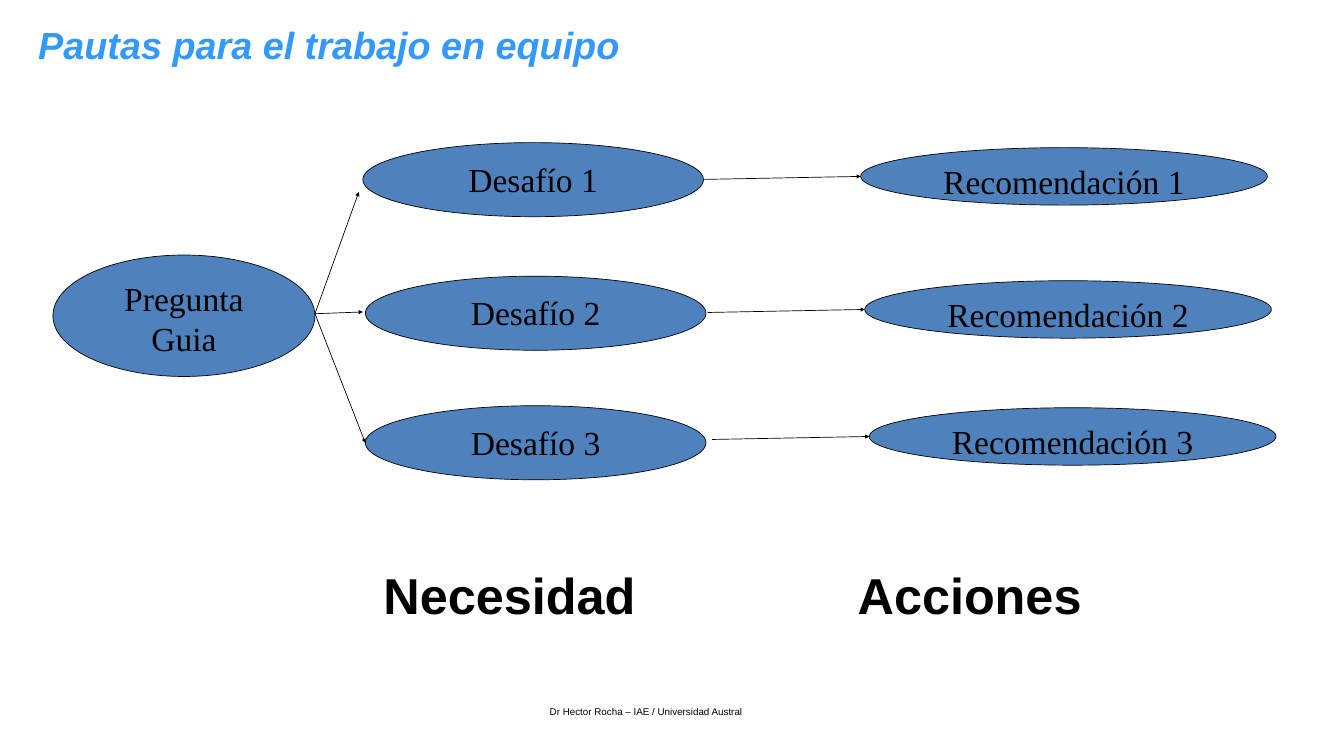
from lxml import etree
from pptx import Presentation
from pptx.dml.color import RGBColor
from pptx.enum.shapes import MSO_CONNECTOR, MSO_SHAPE
from pptx.enum.text import MSO_ANCHOR, PP_ALIGN
from pptx.oxml.ns import qn
from pptx.util import Inches, Pt

COLORS = {"title": "3399FF", "ellipse": "4F81BD", "ink": "000000"}


def rgb(name):
    return RGBColor.from_string(COLORS[name])


def style_text(frame, text, size, font_name, color="ink", bold=False, italic=False):
    frame.word_wrap = True
    frame.vertical_anchor = MSO_ANCHOR.TOP
    frame.text = text
    font = frame.paragraphs[0].runs[0].font
    font.size, font.name = Pt(size), font_name
    font.bold, font.italic = bold, italic
    font.color.rgb = rgb(color)


def add_label(slide, box, text, size, **look):
    label = slide.shapes.add_textbox(*map(Inches, box))
    style_text(label.text_frame, text, size, "Arial", **look)


def add_ellipse(slide, box, text):
    ellipse = slide.shapes.add_shape(MSO_SHAPE.OVAL, *map(Inches, box))
    ellipse.shadow.inherit = False
    ellipse.fill.solid()
    ellipse.fill.fore_color.rgb = rgb("ellipse")
    ellipse.line.color.rgb = rgb("ink")
    ellipse.line.width = Pt(1)
    frame = ellipse.text_frame
    frame.margin_left = frame.margin_right = Inches(0.2)
    frame.margin_top = frame.margin_bottom = Inches(0.1)
    style_text(frame, text, 48, "Times New Roman")
    frame.paragraphs[0].alignment = PP_ALIGN.CENTER


def add_arrow(slide, start, end):
    arrow = slide.shapes.add_connector(
        MSO_CONNECTOR.STRAIGHT, *map(Inches, (*start, *end)))
    arrow.line.color.rgb = rgb("ink")
    arrow.line.width = Pt(1)
    etree.SubElement(arrow.line._get_or_add_ln(), qn("a:tailEnd"), type="triangle")
    etree.SubElement(arrow._element.spPr, qn("a:effectLst"))


def add_question(slide, box, targets):
    left, top, width, height = box
    add_ellipse(slide, box, "Pregunta Guia")
    for target in targets:
        add_arrow(slide, (left + width, top + height / 2 - 0.04), target)


def add_challenge_row(slide, number, box, action_left, action_top):
    left, top, width, height = box
    action_width, action_height = 8.07, 1.14
    action_middle = action_top + action_height / 2
    add_ellipse(slide, box, f"Desafío {number}")
    add_ellipse(slide, (action_left, action_top, action_width, action_height),
                f"Recomendación {number}")
    add_arrow(slide, (action_left - 3.12, action_middle + 0.06),
              (action_left, action_middle))


def add_column_headings(slide, top):
    add_label(slide, (7.51, top, 8, 1.31), "Necesidad", 72, bold=True)
    add_label(slide, (16.92, top, 7.65, 1.31), "Acciones", 72, bold=True)


def main():
    deck = Presentation()
    deck.slide_width, deck.slide_height = Inches(26.67), Inches(15)
    slide = deck.slides.add_slide(deck.slide_layouts[6])

    add_label(slide, (10.81, 13.96, 5.67, 0.34),
              "Dr Hector Rocha – IAE / Universidad Austral", 14)
    add_label(slide, (0.66, 0.39, 16.43, 1.01), "Pautas para el trabajo en equipo",
              54, color="title", bold=True, italic=True)
    add_question(slide, (1.05, 5.06, 5.2, 2.41),
                 [(7.12, 3.81), (7.2, 6.19), (7.25, 8.79)])
    rows = [(7.2, 2.83, 17.08, 2.93), (7.25, 5.48, 17.16, 5.57),
            (7.25, 8.05, 17.25, 8.09)]
    for number, (left, top, action_left, action_top) in enumerate(rows, 1):
        add_challenge_row(slide, number, (left, top, 6.76, 1.47),
                          action_left, action_top)
    add_column_headings(slide, 11.14)

    deck.save("out.pptx")


if __name__ == "__main__":
    main()
